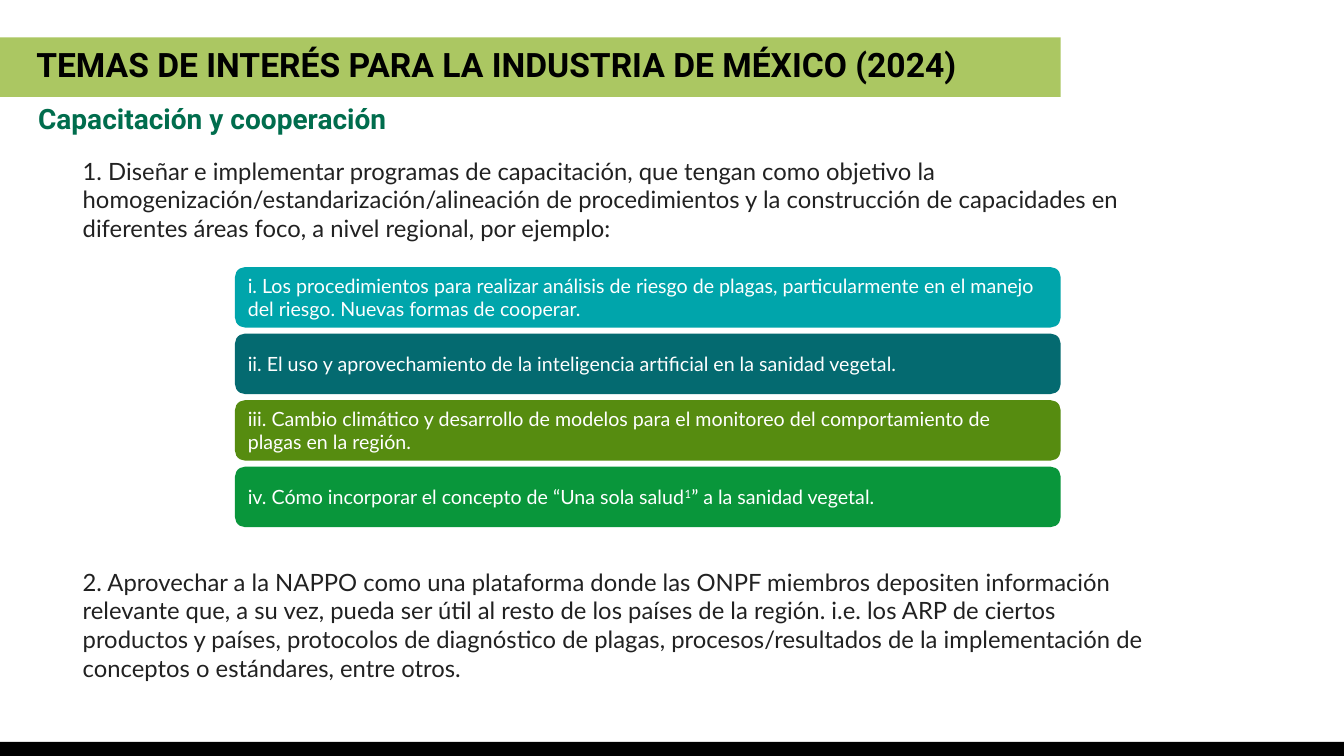
from pptx import Presentation
from pptx import util as u
from pptx.dml.color import RGBColor
from pptx.enum import shapes, text
from lxml import etree

WIDTH, HEIGHT = 13.33, 7.5
MARGIN = 2.33          # left edge of the topic bars
RIGHT = 10.52          # shared right edge of title band and topic bars
BAR_TOP, BAR_HEIGHT, BAR_STEP = 2.65, 0.6, 0.66
DRAWING = "{http://schemas.openxmlformats.org/drawingml/2006/main}"

deck = Presentation()
deck.slide_width, deck.slide_height = u.Inches(WIDTH), u.Inches(HEIGHT)
page = deck.slides.add_slide(deck.slide_layouts[3])  # title and two bodies
title, first_body, second_body = list(page.placeholders)[:3]


def add_block(kind, left, top, width, height, fill):
    block = page.shapes.add_shape(kind, *map(u.Inches, (left, top, width, height)))
    block.shadow.inherit = False
    block.fill.solid()
    block.fill.fore_color.rgb = RGBColor.from_string(fill)
    block.line.fill.background()
    return block


def write(box, runs, font, size, color, bold=False, anchor=text.MSO_ANCHOR.TOP):
    frame = box.text_frame
    frame.word_wrap = True
    frame.auto_size = text.MSO_AUTO_SIZE.NONE
    frame.vertical_anchor = anchor
    para = frame.paragraphs[0]
    para.alignment = text.PP_ALIGN.LEFT
    para.space_before = u.Pt(0)
    for words in runs:
        span = para.add_run()
        span.text = words
        span.font.name, span.font.size, span.font.bold = font, u.Pt(size), bold
        span.font.color.rgb = RGBColor.from_string(color)
    return para


# Title on its green band, which lies behind the placeholders
band = add_block(shapes.MSO_SHAPE.RECTANGLE, 0, 0.37, RIGHT, 0.59, "ABC762")
page.shapes._spTree.insert(2, band._element)
title.left, title.top, title.width, title.height = map(u.Inches, (0.26, 0.02, 10.96, 1.29))
heading = write(title, ["TEMAS DE INTERÉS PARA LA INDUSTRIA DE MÉXICO (2024)"],
                "Roboto", 24, "000000", True, text.MSO_ANCHOR.MIDDLE)
heading.line_spacing = 0.9

# Subtitle
subtitle = page.shapes.add_textbox(*map(u.Inches, (0.28, 0.96, 6.67, 0.44)))
write(subtitle, ["Capacitación y cooperación"], "Roboto", 20, "006D4D", True)

# Numbered proposals
proposals = [
    (first_body, 1.5, 11.46, 0.96,
     " Diseñar e implementar programas de capacitación, que tengan como objetivo la "
     "homogenización/estandarización/alineación de procedimientos y la construcción de "
     "capacidades en diferentes áreas foco, a nivel regional, por ejemplo:"),
    (second_body, 5.58, 10.72, 1.25,
     " Aprovechar a la NAPPO como una plataforma donde las ONPF miembros depositen "
     "información relevante que, a su vez, pueda ser útil al resto de los países de la "
     "región. i.e. los ARP de ciertos productos y países, protocolos de diagnóstico de "
     "plagas, procesos/resultados de la implementación de conceptos o estándares, entre otros."),
]
for number, (body, top, width, height, words) in enumerate(proposals, 1):
    body.left, body.top, body.width, body.height = map(u.Inches, (0.72, top, width, height))
    para = write(body, [words], "Lato", 17, "212121")
    props = para._p.get_or_add_pPr()
    props.set("marL", "0")
    props.set("indent", "0")
    etree.SubElement(props, DRAWING + "buFont", typeface="+mj-lt")
    etree.SubElement(props, DRAWING + "buAutoNum", type="arabicPeriod", startAt=str(number))

# Topic bars
topics = [
    ("00A5AB", ["i. Los procedimientos para realizar análisis de riesgo de plagas, "
                "particularmente en el manejo del riesgo. Nuevas formas de cooperar."]),
    ("046A70", ["ii. El uso y aprovechamiento de la inteligencia artificial en la sanidad vegetal."]),
    ("568C10", ["iii. Cambio climático y desarrollo de modelos para el monitoreo del "
                "comportamiento de plagas en la región."]),
    ("09963B", ["iv. Cómo incorporar el concepto de “Una sola salud", "1",
                "” a la sanidad vegetal."]),
]
for row, (fill, runs) in enumerate(topics):
    bar = add_block(shapes.MSO_SHAPE.ROUNDED_RECTANGLE, MARGIN, BAR_TOP + row * BAR_STEP,
                    RIGHT - MARGIN, BAR_HEIGHT, fill)
    para = write(bar, runs, "Lato", 14, "FFFFFF", anchor=text.MSO_ANCHOR.MIDDLE)
    for span in para.runs:
        if span.text == "1":  # footnote mark
            span.font._element.set("baseline", "30000")

# Black strip along the bottom edge
add_block(shapes.MSO_SHAPE.RECTANGLE, 0, HEIGHT - 0.14, WIDTH, 0.14, "000000")

deck.save("out.pptx")
